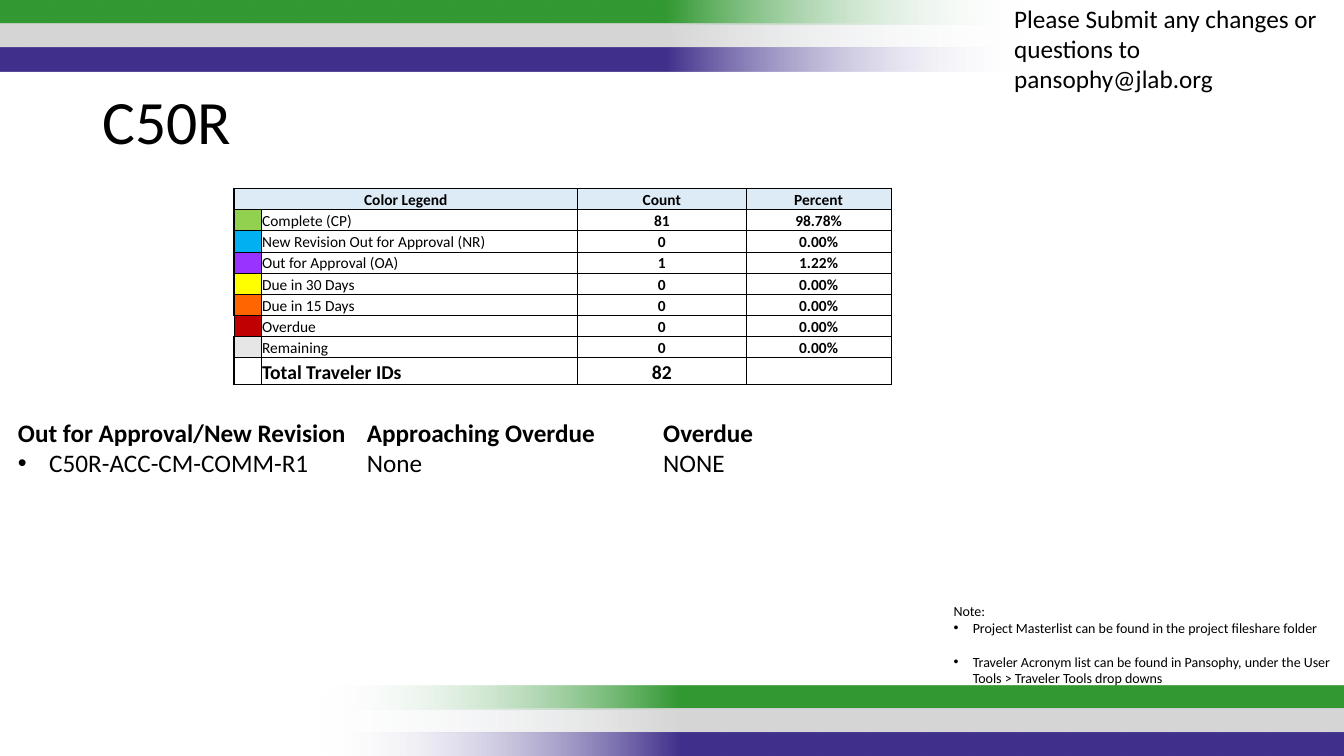
"""Build the C50R traveler status slide."""
import copy

import pptx
import pptx.dml.color
import pptx.enum.shapes
import pptx.enum.text
import pptx.oxml.ns
import pptx.util
from lxml import etree

THEME = {
    "font": "Calibri", "text": "000000", "header": "DDEBF7", "fade": "F7FAFD",
    "stripes": ("339933", "D6D6D6", "42318C"),
    "title": 44, "body": 18, "total": 14, "cell": 11, "note": 10,
}
EMU_PER_PX = 9144
ALIGN = pptx.enum.text.PP_ALIGN
qn = pptx.oxml.ns.qn
rgb = pptx.dml.color.RGBColor.from_string


def px(length):
    return pptx.util.Emu(length * EMU_PER_PX)


def write(paragraph, text, size, bold=False):
    run = paragraph.add_run()
    run.text = text
    run.font.name = THEME["font"]
    run.font.size = pptx.util.Pt(size)
    run.font.bold = bold
    run.font.color.rgb = rgb(THEME["text"])


presentation = pptx.Presentation()
presentation.slide_width, presentation.slide_height = px(1333), px(750)
slide = presentation.slides.add_slide(presentation.slide_layouts[6])

for left, top, rotation in ((-1, 0, 180), (318, 680, 0)):
    for offset, color in zip((0, 23, 47), THEME["stripes"]):
        stripe = slide.shapes.add_shape(
            pptx.enum.shapes.MSO_SHAPE.RECTANGLE, px(left), px(top + offset), px(1017), px(24))
        stripe.rotation = rotation
        stripe.shadow.inherit = False
        stripe.line.fill.background()
        stripe.fill.gradient()
        stripe.fill.gradient_angle = 0
        fade, solid = stripe.fill.gradient_stops
        fade.color.rgb, fade.position = rgb(THEME["fade"]), 0
        solid.color.rgb, solid.position = rgb(color), 0.35
        stops = stripe._element.spPr.find(".//" + qn("a:gsLst"))
        etree.SubElement(stops[0][0], qn("a:alpha"), val="0")
        end_stop = copy.deepcopy(stops[1])
        end_stop.set("pos", "100000")
        stops.append(end_stop)

legend = [
    ("92D050", "Complete (CP)", "81", "98.78%"),
    ("00B0F0", "New Revision Out for Approval (NR)", "0", "0.00%"),
    ("9933FF", "Out for Approval (OA)", "1", "1.22%"),
    ("FFFF00", "Due in 30 Days", "0", "0.00%"),
    ("FF6600", "Due in 15 Days", "0", "0.00%"),
    ("C00000", "Overdue", "0", "0.00%"),
    ("E7E6E6", "Remaining", "0", "0.00%"),
]
rows = [("Color Legend", "", "Count", "Percent")]
rows += [("", *entry[1:]) for entry in legend]
rows += [("", "Total Traveler IDs", "82", "")]
last = len(rows) - 1
table = slide.shapes.add_table(len(rows), 4, px(232), px(187), px(652), px(195)).table
table.first_row = table.horz_banding = False
for column, width in zip(table.columns, (27, 314, 167, 144)):
    column.width = px(width)
for row_index, texts in enumerate(rows):
    is_header, is_total = row_index == 0, row_index == last
    table.rows[row_index].height = px(27 if is_total else 21)
    size = THEME["total"] if is_total else THEME["cell"]
    for column_index, text in enumerate(texts):
        cell = table.cell(row_index, column_index)
        cell.margin_left = cell.margin_right = cell.margin_top = px(1)
        cell.margin_bottom = 0
        cell.vertical_anchor = pptx.enum.text.MSO_ANCHOR.BOTTOM
        thick = {
            "lnL": column_index == 0 and texts[1] != "Overdue",
            "lnR": column_index == 3 and is_header,
            "lnT": is_header,
            "lnB": is_total,
        }
        properties = cell._tc.get_or_add_tcPr()
        for side, is_thick in thick.items():
            border = etree.SubElement(
                properties, qn("a:" + side), w=str(pptx.util.Pt(1 if is_thick else 0.5)))
            border_fill = etree.SubElement(border, qn("a:solidFill"))
            etree.SubElement(border_fill, qn("a:srgbClr"), val=THEME["text"])
        if is_header or (column_index == 0 and not is_total):
            cell.fill.solid()
            cell.fill.fore_color.rgb = rgb(
                THEME["header"] if is_header else legend[row_index - 1][0])
        else:
            cell.fill.background()
        paragraph = cell.text_frame.paragraphs[0]
        if text:
            paragraph.alignment = ALIGN.CENTER if is_header or column_index > 1 else ALIGN.LEFT
            write(paragraph, text, size, is_header or is_total or column_index > 1)
        else:
            etree.SubElement(paragraph._p, qn("a:endParaRPr"), sz=str(size * 100))
table.cell(0, 0).merge(table.cell(0, 1))

text_boxes = [
    (92, 86, 1150, 99, "title", [("C50R", False, 0, 0)]),
    (8, 409, 345, 71, "body", [("Out for Approval/New Revision", True, 0, 0),
                               ("C50R-ACC-CM-COMM-R1", False, 31, 0)]),
    (354, 409, 295, 71, "body", [("Approaching Overdue", True, 0, 0), ("None", False, 0, 0)]),
    (648, 409, 603, 101, "body", [("Overdue", True, 0, 0), ("NONE", False, 0, 0)]),
    (996, -2, 338, 101, "body", [
        ("Please Submit any changes or questions to pansophy@jlab.org", False, 0, 0)]),
    (936, 593, 397, 94, "note", [
        ("Note:", False, 0, 0),
        ("Project Masterlist can be found in the project fileshare folder", False, 19, 0),
        ("Traveler Acronym list can be found in Pansophy, under the User "
         "Tools > Traveler Tools drop downs", False, 19, 12)]),
]
for left, top, width, height, style, lines in text_boxes:
    frame = slide.shapes.add_textbox(px(left), px(top), px(width), px(height)).text_frame
    frame.word_wrap = True
    for index, (text, bold, indent, space_before) in enumerate(lines):
        paragraph = frame.add_paragraph() if index else frame.paragraphs[0]
        if indent:
            properties = paragraph._p.get_or_add_pPr()
            properties.set("marL", str(px(indent)))
            properties.set("indent", str(px(-indent)))
            etree.SubElement(properties, qn("a:buFont"), typeface="Arial")
            etree.SubElement(properties, qn("a:buChar"), char="•")
        if space_before:
            paragraph.space_before = pptx.util.Pt(space_before)
        if style == "title":
            paragraph.line_spacing = 0.9
        write(paragraph, text, THEME[style], bold)

presentation.save("out.pptx")
